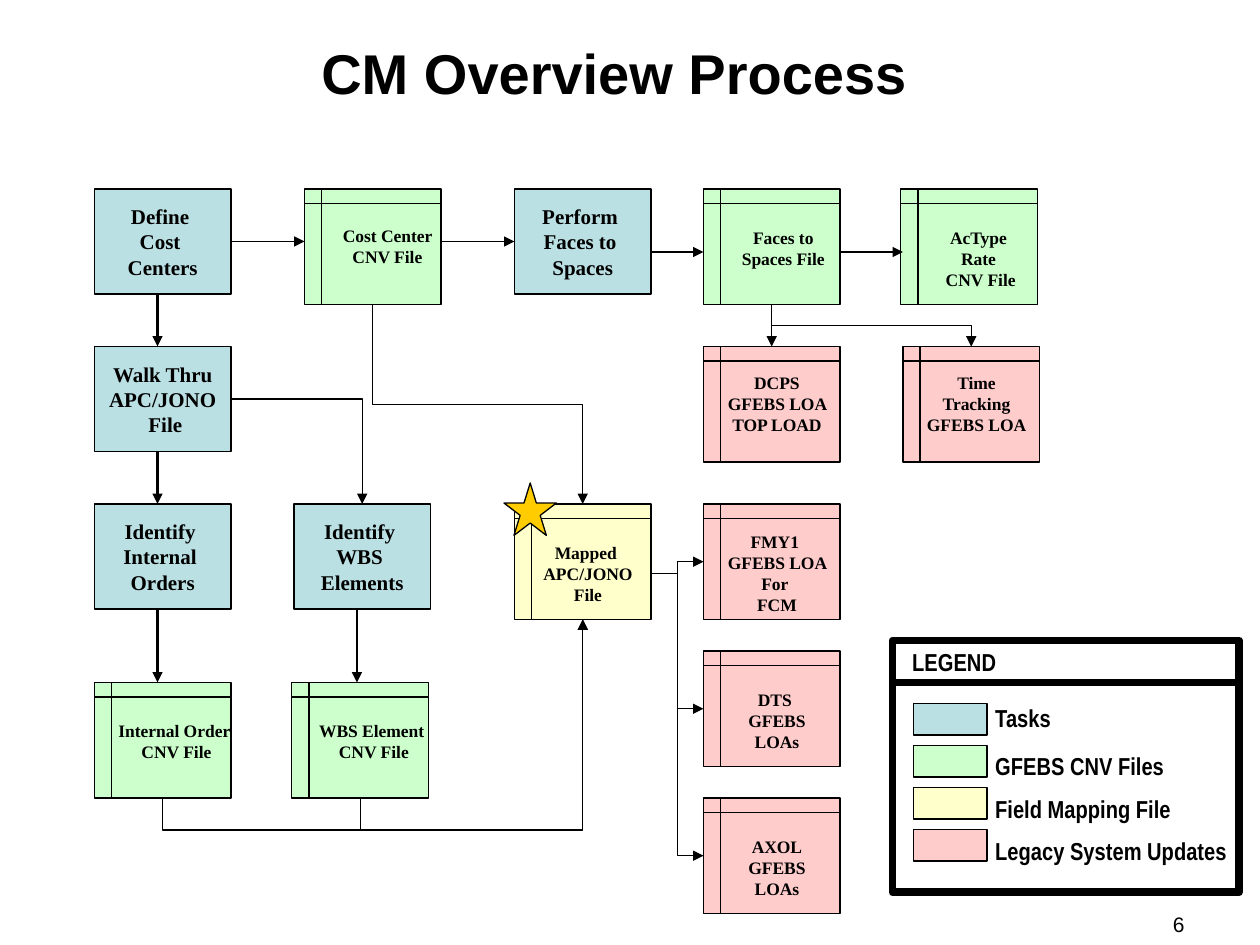
from dataclasses import dataclass
from typing import NamedTuple, Optional

from lxml.etree import SubElement as Sub
from pptx import Presentation
from pptx.dml.color import RGBColor as RGB
from pptx.enum.shapes import MSO_CONNECTOR as Conn, MSO_SHAPE as Kind
from pptx.enum.text import MSO_ANCHOR as Anchor, PP_ALIGN as Align
from pptx.oxml.ns import qn
from pptx.util import Emu, Pt

PX = 7620


@dataclass(frozen=True)
class Theme:
    ink: str = "000000"
    paper: str = "FFFFFF"
    task: str = "BBE0E3"
    file: str = "CCFFCC"
    map: str = "FFFFCC"
    load: str = "FFCCCC"
    star: str = "FFCC00"
    serif: str = "Times New Roman"
    sans: str = "Arial"
    slim: str = "Arial Narrow"
    title: int = 32
    key: int = 14
    step: int = 12
    note: int = 10
    thin: float = 0.75
    bold: float = 1.5
    thick: float = 4.5


T = Theme()


class Task(NamedTuple):
    x: int
    y: int
    text: str


class File(NamedTuple):
    x: int
    y: int
    fill: str
    text: str
    dx: int = 10
    dy: int = 30
    wide: int = 120
    high: int = 72


class Line(NamedTuple):
    x1: int
    y1: int
    x2: int
    y2: int
    width: float = T.thin
    head: bool = True


class Bend(NamedTuple):
    x1: int
    y1: int
    x2: int
    y2: int
    down: bool = False
    turn: Optional[float] = 0.5


class Key(NamedTuple):
    y: int
    fill: str
    top: int
    wide: int
    text: str


TASKS = [
    Task(90, 180, "Define \nCost \nCenters"),
    Task(490, 180, "Perform \nFaces to \nSpaces"),
    Task(90, 330, "Walk Thru\nAPC/JONO\n File"),
    Task(90, 480, "Identify \nInternal \nOrders"),
    Task(280, 480, "Identify \nWBS \nElements"),
]
FILES = [
    File(290, 180, T.file, "Cost Center CNV File", 18, 28, 122, 52),
    File(670, 180, T.file, "Faces to Spaces File", wide=132, high=52),
    File(858, 180, T.file, "AcType \nRate \nCNV File", wide=132),
    File(90, 650, T.file, "Internal Order\n CNV File", wide=132),
    File(278, 650, T.file, "WBS Element\n CNV File", wide=132),
    File(490, 480, T.map, "Mapped \nAPC/JONO File"),
    File(670, 330, T.load, "DCPS\nGFEBS LOA \nTOP LOAD", dy=18, high=92),
    File(860, 330, T.load, "Time Tracking GFEBS LOA", dy=18, high=92),
    File(670, 480, T.load, "FMY1 \nGFEBS LOA For \nFCM", dy=20, high=92),
    File(670, 620, T.load, "DTS \nGFEBS LOAs"),
    File(670, 760, T.load, "AXOL\nGFEBS LOAs"),
]
LINES = [
    Line(150, 280, 150, 330, T.bold),
    Line(150, 430, 150, 480, T.bold),
    Line(150, 580, 150, 650, T.bold),
    Line(340, 580, 340, 650, T.bold),
    Line(220, 230, 290, 230),
    Line(420, 230, 490, 230),
    Line(620, 240, 670, 240),
    Line(800, 240, 860, 240),
    Line(735, 290, 735, 330),
]
BENDS = [
    Bend(220, 380, 345, 480, turn=None),
    Bend(155, 760, 555, 590, True, -0.18),
    Bend(343, 760, 555, 590, True, -0.18),
    Bend(355, 290, 555, 480, True),
    Bend(735, 290, 925, 330, True),
    *(Bend(620, 546, 670, y) for y in (535, 675, 815)),
]
KEYS = [
    Key(670, T.task, 664, 78, "Tasks"),
    Key(710, T.file, 709, 185, "GFEBS CNV Files"),
    Key(750, T.map, 750, 192, "Field Mapping File"),
    Key(790, T.load, 790, 245, "Legacy System Updates"),
]


def px(*nums: float) -> list[Emu]:
    return [Emu(int(n * PX)) for n in nums]


def write(frame, text: str, size: int, face: str, align=Align.CENTER,
          bold: bool = True, wrap: bool = True) -> None:
    frame.word_wrap = wrap
    for i, row in enumerate(text.split("\n")):
        para = frame.add_paragraph() if i else frame.paragraphs[0]
        para.add_run().text = row
        para.alignment = align
        font = para.font
        font.size, font.name, font.bold = Pt(size), face, bold
        font.color.rgb = RGB.from_string(T.ink)


def label(slide, x: int, y: int, w: int, h: int, text: str, size: int,
          face: str, **opts) -> None:
    box = slide.shapes.add_textbox(*px(x, y, w, h))
    write(box.text_frame, text, size, face, **opts)


def block(slide, kind, x: int, y: int, w: int, h: int, fill: str,
          width: float = T.thin):
    shape = slide.shapes.add_shape(kind, *px(x, y, w, h))
    shape.shadow.inherit = False
    shape.fill.solid()
    shape.fill.fore_color.rgb = RGB.from_string(fill)
    shape.line.color.rgb = RGB.from_string(T.ink)
    shape.line.width = Pt(width)
    return shape


def link(slide, kind, ends: tuple, width: float = T.thin, head: bool = True):
    conn = slide.shapes.add_connector(kind, *px(*ends))
    conn.line.color.rgb = RGB.from_string(T.ink)
    conn.line.width = Pt(width)
    if head:
        Sub(conn.line._get_or_add_ln(), qn("a:tailEnd"), type="triangle")
    Sub(conn._element.spPr, qn("a:effectLst"))
    return conn


def bend(slide, b: Bend) -> None:
    ends = b[:4]
    if b.down:
        cx, cy = (b.x1 + b.x2) / 2, (b.y1 + b.y2) / 2
        rx, ry = (b.x2 - b.x1) / 2, (b.y2 - b.y1) / 2
        ends = (cx - ry, cy + rx, cx + ry, cy - rx)
    props = link(slide, Conn.ELBOW, ends)._element.spPr
    if b.down:
        props.find(qn("a:xfrm")).set("rot", "5400000")
    geom = props.find(qn("a:prstGeom"))
    if b.turn is None:
        geom.set("prst", "bentConnector2")
    else:
        Sub(geom.find(qn("a:avLst")), qn("a:gd"), name="adj1",
            fmla=f"val {round(b.turn * 100000)}")


def task(slide, t: Task) -> None:
    frame = block(slide, Kind.RECTANGLE, t.x, t.y, 130, 100, T.task).text_frame
    frame.vertical_anchor = Anchor.MIDDLE
    write(frame, t.text, T.step, T.serif, wrap=False)


def file(slide, f: File) -> None:
    block(slide, Kind.FLOWCHART_INTERNAL_STORAGE, f.x, f.y, 130, 110, f.fill)
    label(slide, f.x + f.dx, f.y + f.dy, f.wide, f.high, f.text, T.note, T.serif)


def legend(slide) -> None:
    block(slide, Kind.RECTANGLE, 850, 610, 330, 240, T.paper, T.thick)
    link(slide, Conn.STRAIGHT, (850, 650, 1180, 650), T.thick, False)
    style = dict(size=T.key, face=T.slim, align=Align.LEFT)
    label(slide, 857, 610, 130, 40, "LEGEND", **style)
    for k in KEYS:
        block(slide, Kind.RECTANGLE, 870, k.y, 70, 30, k.fill)
        label(slide, 936, k.top, k.wide + 10, 40, k.text, **style)


def main() -> None:
    deck = Presentation()
    deck.slide_width, deck.slide_height = px(1200, 900)
    slide = deck.slides.add_slide(deck.slide_layouts[6])
    for t in TASKS:
        task(slide, t)
    for f in FILES:
        file(slide, f)
    for n in LINES:
        link(slide, Conn.STRAIGHT, n[:4], n.width, n.head)
    for b in BENDS:
        bend(slide, b)
    legend(slide)
    block(slide, Kind.STAR_5_POINT, 480, 460, 50, 50, T.star)
    label(slide, 120, 31, 930, 77, "CM Overview Process", T.title, T.sans)
    label(slide, 860, 862, 280, 48, "6", T.step, T.sans,
          align=Align.RIGHT, bold=False)
    deck.save("out.pptx")


if __name__ == "__main__":
    main()
